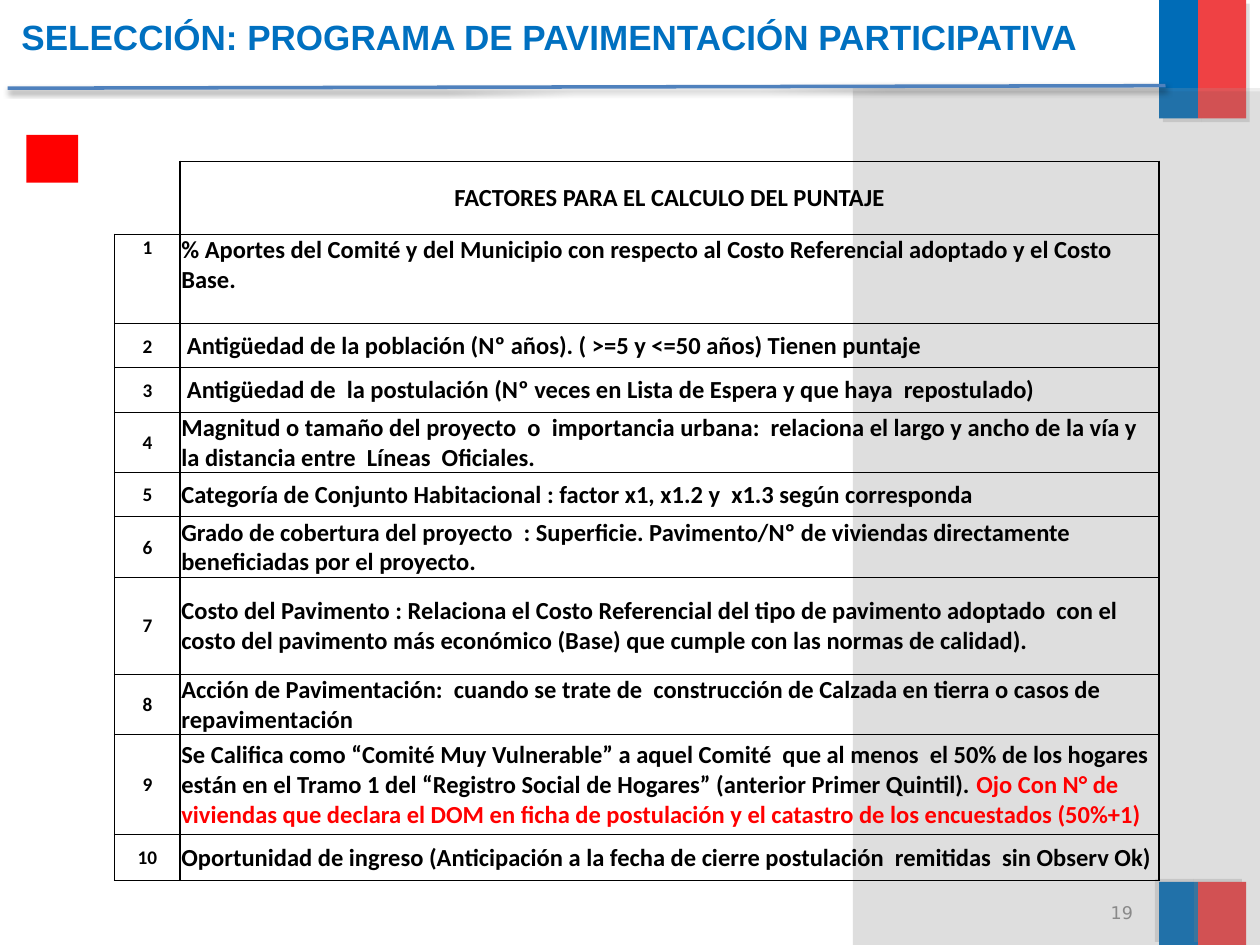
from lxml import etree
from pptx import Presentation
from pptx.dml.color import RGBColor
from pptx.enum.shapes import MSO_CONNECTOR, MSO_SHAPE
from pptx.enum.text import MSO_ANCHOR, MSO_AUTO_SIZE, PP_ALIGN
from pptx.oxml import parse_xml
from pptx.oxml.ns import nsdecls, qn
from pptx.util import Inches, Pt


def color(value):
    return RGBColor.from_string(value)


def add_shadow(shape, value, opacity, blur, distance, direction):
    """Give the shape an outer shadow: opacity in percent, lengths in points."""
    shape._element.spPr.append(parse_xml(
        f'<a:effectLst {nsdecls("a")}><a:outerShdw blurRad="{Pt(blur)}" '
        f'dist="{Pt(distance)}" dir="{direction * 60000}" rotWithShape="0">'
        f'<a:srgbClr val="{value}"><a:alpha val="{opacity * 1000}"/></a:srgbClr>'
        '</a:outerShdw></a:effectLst>'))


presentation = Presentation()
presentation.slide_width = Inches(10)
presentation.slide_height = Inches(7.5)
slide = presentation.slides.add_slide(presentation.slide_layouts[5])
shapes = slide.shapes

# Colour bars, grey side panel and red marker:
# left, top, width, height, fill, shadow
panel_fill = "A6A6A6"
blocks = [
    (9.2, -0.01, 0.31, 0.95, "006CB7", ("808080", 25, 0, 3, 45)),
    (9.51, 0, 0.38, 0.94, "EF4144", ("808080", 25, 0, 3, 45)),
    (9.2, 7, 0.31, 0.5, "006CB7", ("808080", 25, 0, 3, 215)),
    (9.51, 7, 0.38, 0.5, "EF4144", ("808080", 25, 0, 3, 215)),
    (6.77, 0.7, 3.23, 6.8, panel_fill, ("000000", 35, 0, 1.8, 90)),
    (0.21, 1.07, 0.41, 0.38, "FF0000", None),
]
for left, top, width, height, fill, shadow in blocks:
    block = shapes.add_shape(MSO_SHAPE.RECTANGLE, Inches(left), Inches(top),
                             Inches(width), Inches(height))
    block.fill.solid()
    block.fill.fore_color.rgb = color(fill)
    block.line.fill.background()
    if shadow:
        add_shadow(block, *shadow)
    else:
        block.shadow.inherit = False
    if fill == panel_fill:
        fill_color = block._element.spPr.find(qn("a:solidFill"))[0]
        etree.SubElement(fill_color, qn("a:alpha"), val="20000")

# Title
title = shapes.title
title.left, title.top = Inches(0.02), Inches(0.08)
title.width, title.height = Inches(9.18), Inches(0.41)
frame = title.text_frame
frame.text = "SELECCIÓN: PROGRAMA DE PAVIMENTACIÓN PARTICIPATIVA"
frame.auto_size = MSO_AUTO_SIZE.NONE
frame.vertical_anchor = MSO_ANCHOR.TOP
frame.margin_left, frame.margin_right = Inches(0.15), Inches(0.07)
frame.margin_top = frame.margin_bottom = Inches(0.04)
paragraph = frame.paragraphs[0]
paragraph.alignment = PP_ALIGN.LEFT
paragraph.font.name = "Arial"
paragraph.font.size = Pt(20)
paragraph.font.bold = True
paragraph.font.color.rgb = color("0070C0")

# Rule under the title
rule = shapes.add_connector(MSO_CONNECTOR.STRAIGHT, Inches(0.06), Inches(0.7),
                            Inches(9.25), Inches(0.68))
rule.line.color.rgb = color("4F81BD")
rule.line.width = Pt(2)
add_shadow(rule, "000000", 38, 3.1, 1.6, 90)

# Slide number
number_box = shapes.add_textbox(Inches(6.76), Inches(7.14), Inches(2.33), Inches(0.21))
frame = number_box.text_frame
frame.word_wrap = True
frame.vertical_anchor = MSO_ANCHOR.MIDDLE
frame.text = "19"
paragraph = frame.paragraphs[0]
paragraph.alignment = PP_ALIGN.RIGHT
paragraph.font.name = "DejaVu Sans"
paragraph.font.size = Pt(10)
paragraph.font.color.rgb = color("898989")

# Table of scoring factors: row height and text
header = "FACTORES PARA EL CALCULO DEL PUNTAJE"
factors = [
    (0.71, "% Aportes del Comité y del Municipio con respecto al Costo Referencial "
           "adoptado y el Costo Base."),
    (0.35, " Antigüedad de la población (Nº años). ( >=5 y <=50 años) Tienen puntaje"),
    (0.35, " Antigüedad de  la postulación (Nº veces en Lista de Espera y que haya  "
           "repostulado)"),
    (0.48, "Magnitud o tamaño del proyecto  o  importancia urbana:  relaciona el largo "
           "y ancho de la vía y la distancia entre  Líneas  Oficiales."),
    (0.35, "Categoría de Conjunto Habitacional : factor x1, x1.2 y  x1.3 según corresponda"),
    (0.48, "Grado de cobertura del proyecto  : Superficie. Pavimento/Nº de viviendas "
           "directamente beneficiadas por el proyecto."),
    (0.77, "Costo del Pavimento : Relaciona el Costo Referencial del tipo de pavimento "
           "adoptado  con el costo del pavimento más económico (Base) que cumple con las "
           "normas de calidad)."),
    (0.48, "Acción de Pavimentación:  cuando se trate de  construcción de Calzada en "
           "tierra o casos de repavimentación"),
    (0.79, "Se Califica como “Comité Muy Vulnerable” a aquel Comité  que al menos  el 50% "
           "de los hogares están en el Tramo 1 del “Registro Social de Hogares” (anterior "
           "Primer Quintil). "),
    (0.37, "Oportunidad de ingreso (Anticipación a la fecha de cierre postulación  "
           "remitidas  sin Observ Ok)"),
]
warning_row = 9
warning = ("Ojo Con N° de viviendas que declara el DOM en ficha de postulación y el "
           "catastro de los encuestados (50%+1)")
rows = [(0.58, "", header)]
rows += [(height, str(i), text) for i, (height, text) in enumerate(factors, 1)]
last_row = len(rows) - 1

table = shapes.add_table(len(rows), 2, Inches(0.91), Inches(1.28),
                         Inches(8.29), Inches(5.69)).table
table.first_row = table.horz_banding = False
table.columns[0].width = Inches(0.52)
table.columns[1].width = Inches(7.77)

for row, (height, *texts) in enumerate(rows):
    table.rows[row].height = Inches(height)
    for column, text in enumerate(texts):
        cell = table.cell(row, column)
        cell.fill.background()
        cell.margin_left = cell.margin_right = cell.margin_top = Inches(0.01)
        cell.margin_bottom = 0
        cell.vertical_anchor = MSO_ANCHOR.TOP if row == 1 else MSO_ANCHOR.MIDDLE
        paragraph = cell.text_frame.paragraphs[0]
        centered = row == 0 or column == 0
        paragraph.alignment = PP_ALIGN.CENTER if centered else PP_ALIGN.LEFT
        paragraph.font.name = "Calibri"
        paragraph.font.size = Pt(11 if column == 0 else 14)
        paragraph.font.bold = True
        paragraph.font.color.rgb = color("000000")
        if text:
            paragraph.add_run().text = text
        if row == warning_row and column == 1:
            run = paragraph.add_run()
            run.text = warning
            run.font.color.rgb = color("FF0000")

        # Thin lines between factors, thicker ones elsewhere; open top left corner
        corner = row == 0 and column == 0
        borders = {
            "lnL": 0 if corner else 1,
            "lnR": 1,
            "lnT": 0 if corner else 1 if row <= 1 else 0.5,
            "lnB": 1 if row in (0, last_row) else 0.5,
        }
        properties = cell._tc.get_or_add_tcPr()
        for position, (side, width) in enumerate(borders.items()):
            paint = ('<a:solidFill><a:srgbClr val="000000"/></a:solidFill>'
                     if width else '<a:noFill/>')
            properties.insert(position, parse_xml(
                f'<a:{side} {nsdecls("a")} w="{Pt(width)}">{paint}</a:{side}>'))

presentation.save("out.pptx")
